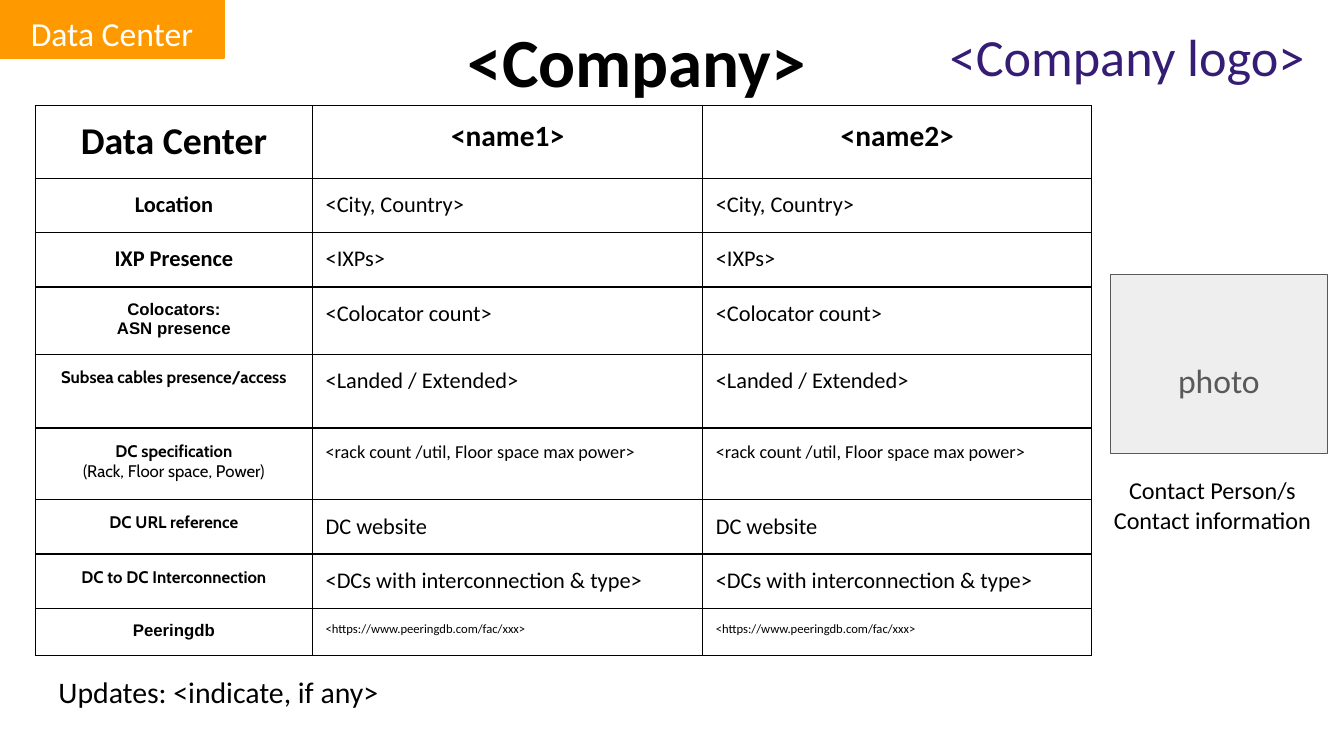
from lxml import etree
from pptx import Presentation
from pptx.dml.color import RGBColor
from pptx.enum.shapes import MSO_SHAPE
from pptx.enum.text import MSO_ANCHOR as ANCHOR, PP_ALIGN as ALIGN
from pptx.oxml.ns import qn
from pptx.util import Inches, Pt

BLACK = RGBColor(0x00, 0x00, 0x00)
WHITE = RGBColor(0xFF, 0xFF, 0xFF)
ORANGE = RGBColor(0xFF, 0x99, 0x00)
PURPLE = RGBColor(0x35, 0x1C, 0x75)
GREY = RGBColor(0x59, 0x59, 0x59)
LIGHT = RGBColor(0xEE, 0xEE, 0xEE)

COLUMNS = [2.75, 3.87, 3.86]
ROWS = [
    (0.71, [("Data Center", 27, "Calibri", True)], ("<name1>", "<name2>"), 21),
    (0.54, [("Location", 16, "Calibri", True)], "<City, Country>", 16),
    (0.54, [("IXP Presence", 16, "Calibri", True)], "<IXPs>", 16),
    (0.67, [("Colocators:", 12, "Arial", True), ("ASN presence", 12, "Arial", True)],
     "<Colocator count>", 16),
    (0.73, [("Subsea cables presence/access", 12, "Cabin", True)], "<Landed / Extended>", 16),
    (0.71, [("DC specification", 12, "Cabin", True),
            ("(Rack, Floor space, Power)", 12, "Cabin", False)],
     "<rack count /util, Floor space max power>", 13),
    (0.54, [("DC URL reference", 12, "Cabin", True)], "DC website", 16),
    (0.54, [("DC to DC Interconnection", 12, "Cabin", True)],
     "<DCs with interconnection & type>", 16),
    (0.47, [("Peeringdb", 12, "Arial", True)], "<https://www.peeringdb.com/fac/xxx>", 9),
]


class SlideBuilder:
    font = "Calibri"
    inset = 0.13

    def __init__(self, slide):
        self.s = slide

    def put_lines(self, tf, lines, size=16, font=None, bold=False, color=BLACK,
                  align=ALIGN.LEFT):
        for i, line in enumerate(lines):
            p = tf.paragraphs[0] if i == 0 else tf.add_paragraph()
            p.alignment = align
            r = p.add_run()
            text, r_size, r_font, r_bold = (
                (line, size, font, bold) if isinstance(line, str) else line)
            r.text = text
            r.font.size = Pt(r_size)
            r.font.name = r_font or self.font
            r.font.bold = r_bold
            r.font.color.rgb = color

    def pad(self, target, top=None):
        target.margin_left = target.margin_right = target.margin_bottom = Inches(self.inset)
        target.margin_top = Inches(top or self.inset)
        target.vertical_anchor = ANCHOR.TOP

    def text(self, box, lines, **fmt):
        tf = self.s.shapes.add_textbox(*map(Inches, box)).text_frame
        tf.word_wrap = True
        self.pad(tf)
        self.put_lines(tf, lines, **fmt)

    def rect(self, box, lines, fill, line, width, top=None, anchor=ANCHOR.TOP, **fmt):
        sp = self.s.shapes.add_shape(MSO_SHAPE.RECTANGLE, *map(Inches, box))
        sp.shadow.inherit = False
        sp.fill.solid()
        sp.fill.fore_color.rgb = fill
        sp.line.color.rgb = line
        sp.line.width = Pt(width)
        tf = sp.text_frame
        tf.word_wrap = True
        self.pad(tf, top)
        tf.vertical_anchor = anchor
        self.put_lines(tf, lines, align=ALIGN.CENTER, **fmt)

    def border(self, cell):
        tc_pr = cell._tc.get_or_add_tcPr()
        for side in ("a:lnL", "a:lnR", "a:lnT", "a:lnB"):
            ln = etree.SubElement(tc_pr, qn(side), w=str(Pt(1)))
            fill = etree.SubElement(ln, qn("a:solidFill"))
            etree.SubElement(fill, qn("a:srgbClr"), val=str(BLACK))

    def table(self, left, top, columns, rows):
        size = sum(columns), sum(row[0] for row in rows)
        tbl = self.s.shapes.add_table(
            len(rows), len(columns), *map(Inches, (left, top, *size))).table
        tbl.first_row = tbl.horz_banding = False
        for column, width in zip(tbl.columns, columns):
            column.width = Inches(width)
        for i, (height, label, value, value_size) in enumerate(rows):
            tbl.rows[i].height = Inches(height)
            header = i == 0
            values = value if header else (value, value)
            for j, lines in enumerate([label, *([v] for v in values)]):
                cell = tbl.cell(i, j)
                self.border(cell)
                cell.fill.background()
                self.pad(cell)
                self.put_lines(cell.text_frame, lines, size=value_size, bold=header,
                               align=ALIGN.CENTER if header or j == 0 else ALIGN.LEFT)


def main():
    prs = Presentation()
    prs.slide_width, prs.slide_height = Inches(13.33), Inches(7.5)
    b = SlideBuilder(prs.slides.add_slide(prs.slide_layouts[6]))
    b.table(0.35, 1.05, COLUMNS, ROWS)
    b.text((9.29, 0.11, 3.8, 1.28), ["<Company logo>"], size=37.3, color=PURPLE)
    b.text((10.72, 4.59, 2.61, 0.85), ["Contact Person/s", "Contact information"],
           size=17.3, align=ALIGN.CENTER)
    b.text((4.51, 0.05, 5.16, 1.28), ["<Company>"], size=49.3, bold=True)
    b.rect((0, 0, 2.22, 0.58), ["Data Center"], ORANGE, ORANGE, 1.5, size=24, color=WHITE)
    b.rect((11.01, 2.72, 2.16, 1.78), ["photo"], LIGHT, GREY, 0.75,
           top=0.45, anchor=ANCHOR.MIDDLE, size=24, color=GREY)
    b.text((0.45, 6.55, 5.39, 0.63), ["Updates: <indicate, if any>"], size=21.3)
    prs.save("out.pptx")


if __name__ == "__main__":
    main()
